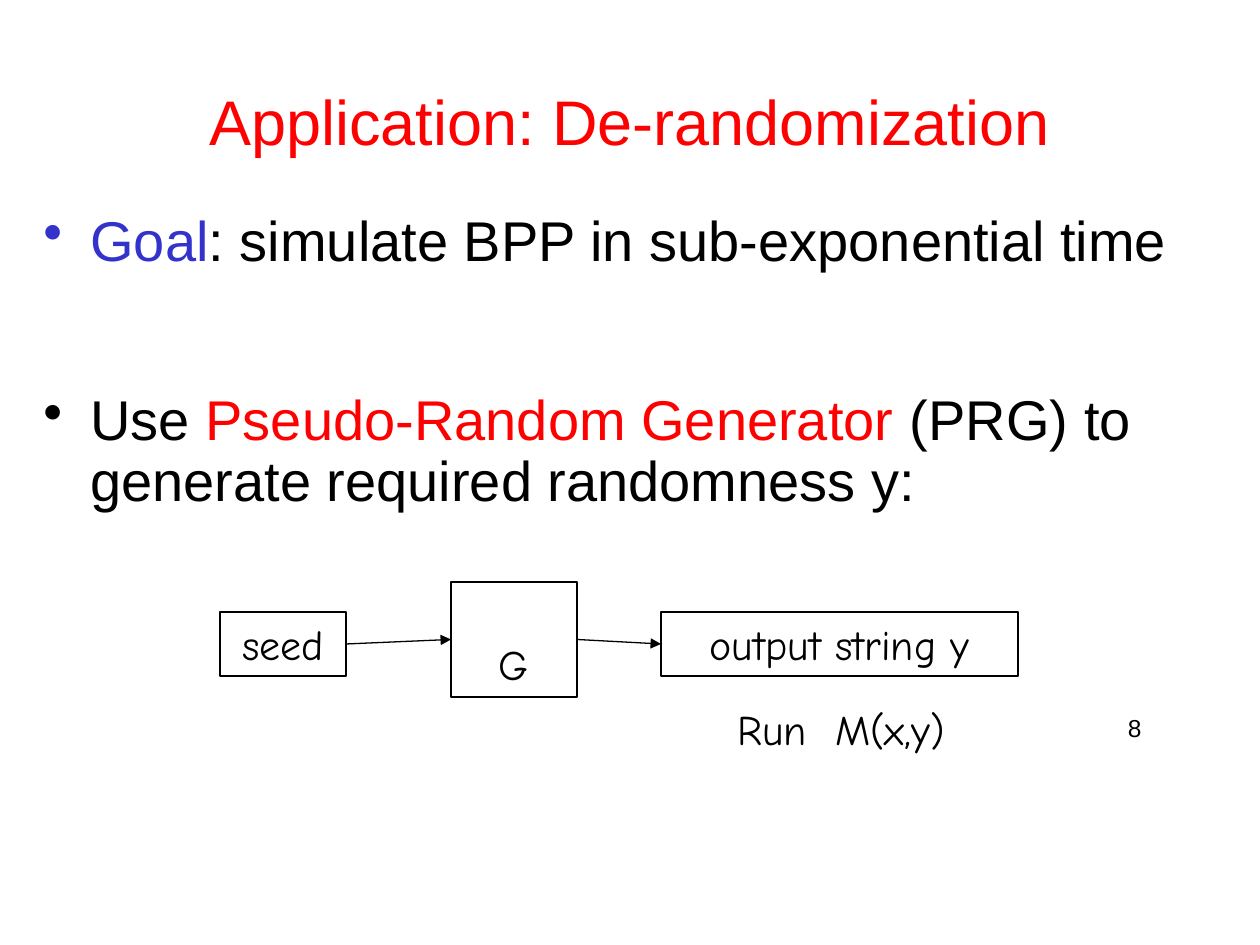
from pptx import Presentation
from pptx import util as u
from pptx.dml.color import RGBColor
from pptx.enum import shapes, text
from pptx.oxml import parse_xml
from pptx.oxml.ns import nsdecls

HUES = {"ink": "000000", "red": "FF0000", "blue": "3333CC"}
SCALE = 914400 / 126  # EMU in one px
ALIGN = text.PP_ALIGN


def emu(*px):
    return [u.Emu(round(n * SCALE)) for n in px]


def hue(name):
    return RGBColor.from_string(HUES[name])


class Board:
    sans, hand = "Arial", "Comic Neue"

    def __init__(self, slide):
        self.slide = slide

    def fill_in(self, para, runs, size, font, align=ALIGN.LEFT):
        para.alignment = align
        for words, tone in runs:
            run = para.add_run()
            run.text = words
            run.font.size = u.Pt(size)
            run.font.name = font
            run.font.color.rgb = hue(tone)

    def frame(self, *box):
        frame = self.slide.shapes.add_textbox(*emu(*box)).text_frame
        frame.word_wrap = True
        return frame

    def label(self, box, words, size, font, align=ALIGN.LEFT, tone="ink",
              anchor=text.MSO_ANCHOR.TOP):
        frame = self.frame(*box)
        frame.vertical_anchor = anchor
        self.fill_in(frame.paragraphs[0], [(words, tone)], size, font, align)

    def bullets(self, box, items, size, indent):
        frame = self.frame(*box)
        step = emu(indent)[0]
        for i, (runs, before, lead) in enumerate(items):
            para = frame.add_paragraph() if i else frame.paragraphs[0]
            para.space_before = u.Pt(before)
            para.line_spacing = lead
            props = para._p.get_or_add_pPr()
            props.set("marL", str(step))
            props.set("indent", str(-step))
            props.append(parse_xml(f'<a:buChar {nsdecls("a")} char="•"/>'))
            self.fill_in(para, runs, size, self.sans)

    def node(self, box, words, lead=1.0):
        rect = self.slide.shapes.add_shape(shapes.MSO_SHAPE.RECTANGLE, *emu(*box))
        rect.shadow.inherit = False
        rect.fill.background()
        rect.line.color.rgb = hue("ink")
        rect.line.width = u.Pt(0.75)
        frame = rect.text_frame
        frame.word_wrap = True
        frame.vertical_anchor = text.MSO_ANCHOR.TOP
        para = frame.paragraphs[0]
        para.line_spacing = lead
        self.fill_in(para, [(words, "ink")], 24, self.hand, ALIGN.CENTER)
        return rect

    def arrow(self, start, end):
        line = self.slide.shapes.add_connector(shapes.MSO_CONNECTOR.STRAIGHT, 0, 0, 0, 0)
        line.begin_connect(start, 3)  # right side
        line.end_connect(end, 1)  # left side
        line.line.color.rgb = hue("ink")
        line.line.width = u.Pt(0.75)
        props = line._element.spPr
        props.get_or_add_ln().append(
            parse_xml(f'<a:tailEnd {nsdecls("a")} type="triangle"/>'))
        props.append(parse_xml(f'<a:effectLst {nsdecls("a")}/>'))


def main():
    deck = Presentation()
    deck.slide_width, deck.slide_height = emu(1260, 945)
    board = Board(deck.slides.add_slide(deck.slide_layouts[6]))

    # Slide number and title
    board.label((892, 707, 262, 63), "8", 14, board.sans, ALIGN.RIGHT)
    board.label((94, 42, 1071, 157), "Application: De-randomization", 36, board.sans,
                ALIGN.CENTER, "red", text.MSO_ANCHOR.MIDDLE)

    # Main points
    goal = [("Goal", "blue"), (": simulate BPP in sub-exponential time", "ink")]
    method = [("Use ", "ink"), ("Pseudo-Random Generator", "red"),
              (" (PRG) to generate required randomness y:", "ink")]
    board.bullets((31, 199, 1187, 567), [(goal, 3.6, 1.0), (method, 68.5, 0.9)], 32, 47)

    # Flow from seed to output
    seed = board.node((220, 612, 126, 64), "seed")
    output = board.node((661, 612, 357, 64), "output string y")
    maker = board.node((451, 582, 126, 115), "G", 2.0)
    board.arrow(seed, maker)
    board.arrow(maker, output)
    board.label((725, 697, 577, 64), "Run  M(x,y)", 24, board.hand)

    deck.save("out.pptx")


if __name__ == "__main__":
    main()
